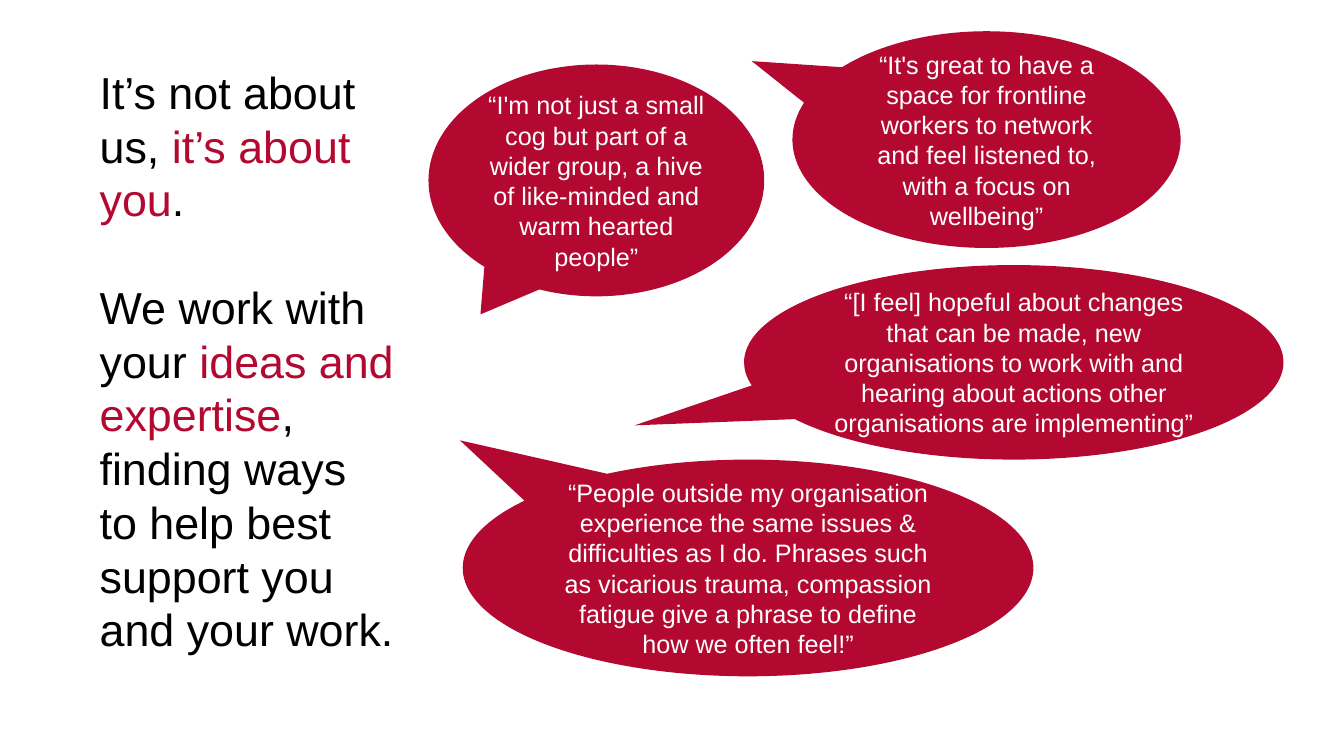
from dataclasses import dataclass

from pptx import Presentation
from pptx.dml.color import RGBColor
from pptx.enum.shapes import MSO_SHAPE
from pptx.enum.text import MSO_ANCHOR, MSO_AUTO_SIZE, PP_ALIGN
from pptx.slide import Slide
from pptx.util import Inches, Pt

CALLOUT = MSO_SHAPE.OVAL_CALLOUT
MIDDLE = MSO_ANCHOR.MIDDLE
GROW = MSO_AUTO_SIZE.SHAPE_TO_FIT_TEXT
CENTER = PP_ALIGN.CENTER

CRIMSON = RGBColor(0xB3, 0x09, 0x31)
BLACK = RGBColor(0x00, 0x00, 0x00)
WHITE = RGBColor(0xFF, 0xFF, 0xFF)
FONT = "Arial"
STATEMENT_SIZE = Pt(32)
QUOTE_SIZE = Pt(18)
PARAGRAPH_GAP = Pt(38.4)


@dataclass(frozen=True)
class Statement:
    opening: str
    emphasis: str
    ending: str


@dataclass(frozen=True)
class Quote:
    left: float
    top: float
    width: float
    height: float
    tail: tuple[float, float]
    text: str


STATEMENTS = [
    Statement("It’s not about us, ", "it’s about you", "."),
    Statement(
        "We work with your ",
        "ideas and expertise",
        ", finding ways to help best support you and your work.",
    ),
]

QUOTES = [
    Quote(7.86, 0.31, 3.85, 2.15, (-0.605, -0.362),
          "“It's great to have a space for frontline workers to network "
          "and feel listened to, with a focus on wellbeing”"),
    Quote(4.25, 0.64, 3.33, 2.3, (-0.345, 0.578),
          "“I'm not just a small cog but part of a wider group, a hive of "
          "like-minded and warm hearted people”"),
    Quote(7.38, 2.63, 5.35, 1.93, (-0.703, 0.324),
          "“[I feel] hopeful about changes that can be made, new "
          "organisations to work with and hearing about actions other "
          "organisations are implementing”"),
    Quote(4.59, 4.56, 5.66, 2.15, (-0.505, -0.589),
          "“People outside my organisation experience the same issues & "
          "difficulties as I do. Phrases such as vicarious trauma, compassion "
          "fatigue give a phrase to define how we often feel!”"),
]


def add_statements(slide: Slide, statements: list[Statement]) -> None:
    box = slide.shapes.add_textbox(Inches(0.89), Inches(0.59), Inches(3.13), Inches(6.02))
    frame = box.text_frame
    frame.word_wrap = True
    frame.auto_size = GROW
    for index, statement in enumerate(statements):
        paragraph = frame.add_paragraph() if index else frame.paragraphs[0]
        if index:
            paragraph.space_before = PARAGRAPH_GAP
        paragraph.font.name = FONT
        paragraph.font.size = STATEMENT_SIZE
        for text, color in (
            (statement.opening, BLACK),
            (statement.emphasis, CRIMSON),
            (statement.ending, BLACK),
        ):
            run = paragraph.add_run()
            run.text = text
            run.font.color.rgb = color


def add_quote(slide: Slide, quote: Quote) -> None:
    bubble = slide.shapes.add_shape(
        CALLOUT,
        Inches(quote.left), Inches(quote.top), Inches(quote.width), Inches(quote.height),
    )
    for index, offset in enumerate(quote.tail):
        bubble.adjustments[index] = offset
    bubble.shadow.inherit = False
    bubble.fill.solid()
    bubble.fill.fore_color.rgb = CRIMSON
    bubble.line.fill.background()
    frame = bubble.text_frame
    frame.word_wrap = True
    frame.vertical_anchor = MIDDLE
    paragraph = frame.paragraphs[0]
    paragraph.text = quote.text
    paragraph.alignment = CENTER
    paragraph.font.name = FONT
    paragraph.font.size = QUOTE_SIZE
    paragraph.font.color.rgb = WHITE


def main() -> None:
    presentation = Presentation()
    presentation.slide_width = Inches(13.33)
    presentation.slide_height = Inches(7.5)
    slide = presentation.slides.add_slide(presentation.slide_layouts[6])
    add_statements(slide, STATEMENTS)
    for quote in QUOTES:
        add_quote(slide, quote)
    presentation.save("out.pptx")


if __name__ == "__main__":
    main()
